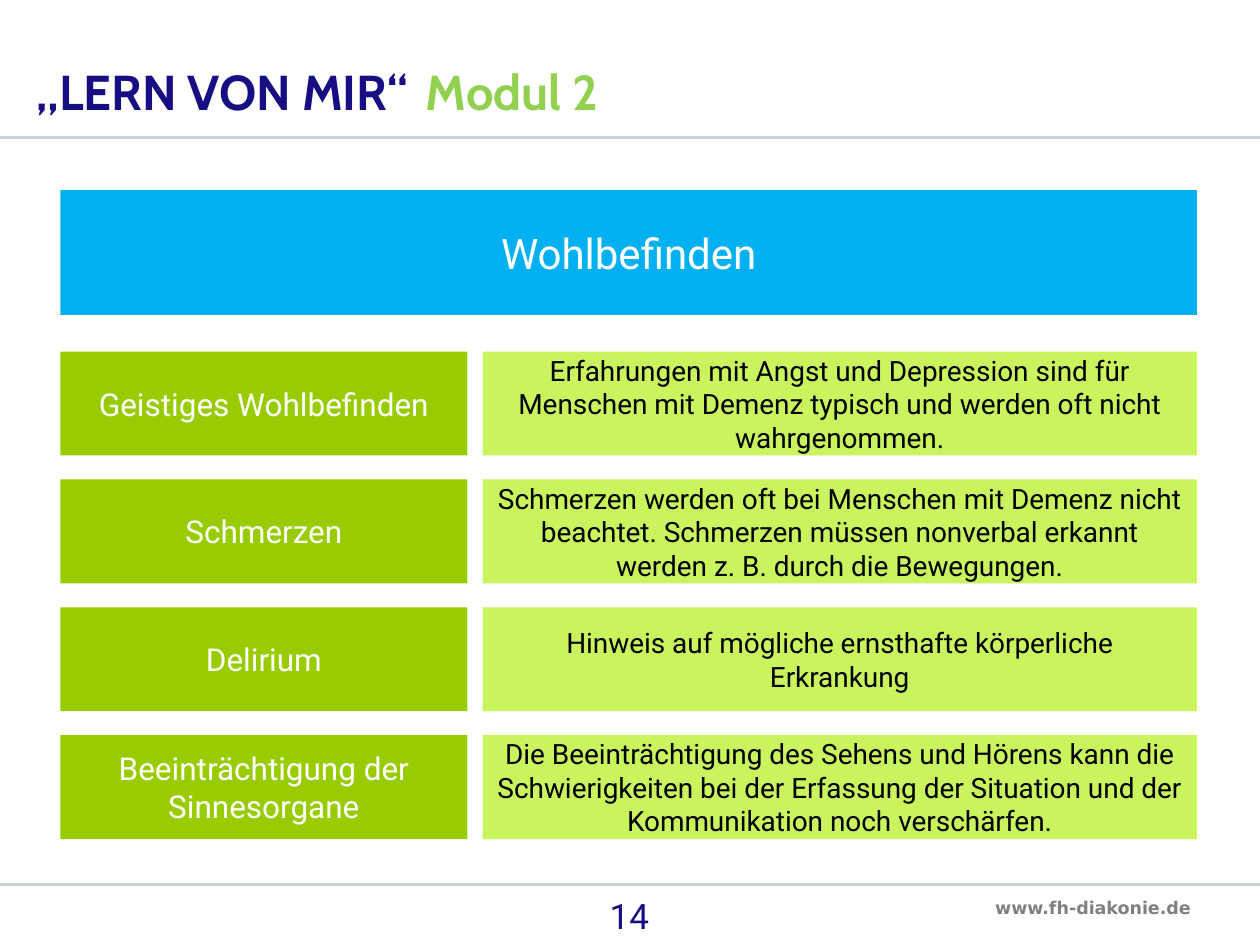
from dataclasses import dataclass

from lxml.etree import SubElement
from pptx import Presentation
from pptx.dml.color import RGBColor
from pptx.enum.shapes import MSO_CONNECTOR, MSO_SHAPE
from pptx.enum.text import MSO_ANCHOR, MSO_AUTO_SIZE, PP_ALIGN
from pptx.oxml.ns import qn
from pptx.util import Inches, Pt


@dataclass(frozen=True)
class Theme:
    navy: str = "170E83"
    lime: str = "92D050"
    blue: str = "00B0F0"
    green: str = "99CC00"
    pale: str = "C9F45E"
    rule: str = "C8D2DC"
    grey: str = "808080"
    white: str = "FFFFFF"
    black: str = "000000"
    title_font: str = "Cabin"
    body_font: str = "Roboto"
    web_font: str = "DejaVu Sans"
    title_size: int = 28
    head_size: int = 24
    page_size: int = 20
    label_size: int = 18
    body_size: int = 16
    web_size: int = 10


THEME = Theme()

ROWS = [
    ("Geistiges Wohlbefinden",
     "Erfahrungen mit Angst und Depression sind für Menschen mit Demenz "
     "typisch und werden oft nicht wahrgenommen."),
    ("Schmerzen",
     "Schmerzen werden oft bei Menschen mit Demenz nicht beachtet. "
     "Schmerzen müssen nonverbal erkannt werden z. B. durch die Bewegungen."),
    ("Delirium",
     "Hinweis auf mögliche ernsthafte körperliche Erkrankung"),
    ("Beeinträchtigung der Sinnesorgane",
     "Die Beeinträchtigung des Sehens und Hörens kann die Schwierigkeiten bei "
     "der Erfassung der Situation und der Kommunikation noch verschärfen."),
]


def format_run(r, font, size, color, bold=False):
    r.font.name = font
    r.font.size = Pt(size)
    r.font.bold = bold
    r.font.color.rgb = RGBColor.from_string(color)


def add_rule(s, y):
    line = s.shapes.add_connector(
        MSO_CONNECTOR.STRAIGHT, Inches(0), Inches(y), Inches(10), Inches(y))
    line.line.color.rgb = RGBColor.from_string(THEME.rule)
    line.line.width = Pt(1.5)
    SubElement(line._element.spPr, qn("a:effectLst"))


def add_text(s, box, text, font, size, color, align, bold=False, wrap=True):
    tf = s.shapes.add_textbox(*map(Inches, box)).text_frame
    tf.word_wrap = wrap
    tf.text = text
    p = tf.paragraphs[0]
    p.alignment = align
    format_run(p.runs[0], font, size, color, bold)


def add_block(s, box, text, fill, size, color):
    sp = s.shapes.add_shape(MSO_SHAPE.RECTANGLE, *map(Inches, box))
    sp.shadow.inherit = False
    sp.fill.solid()
    sp.fill.fore_color.rgb = RGBColor.from_string(fill)
    sp.line.fill.background()
    tf = sp.text_frame
    tf.word_wrap = True
    tf.vertical_anchor = MSO_ANCHOR.MIDDLE
    tf.text = text
    p = tf.paragraphs[0]
    p.alignment = PP_ALIGN.CENTER
    format_run(p.runs[0], THEME.body_font, size, color)


def add_title(s, box, name, module, tab):
    sp = s.shapes.title
    sp.left, sp.top, sp.width, sp.height = map(Inches, box)
    tf = sp.text_frame
    tf.word_wrap = True
    tf.auto_size = MSO_AUTO_SIZE.NONE
    tf.vertical_anchor = MSO_ANCHOR.BOTTOM
    p = tf.paragraphs[0]
    p.alignment = PP_ALIGN.LEFT
    p.line_spacing = 0.9
    tabs = SubElement(p._p.get_or_add_pPr(), qn("a:tabLst"))
    SubElement(tabs, qn("a:tab"), pos=str(Inches(tab)), algn="l")
    for text, color in ((f"{name}\t", THEME.navy), (module, THEME.lime)):
        r = p.add_run()
        r.text = text
        format_run(r, THEME.title_font, THEME.title_size, color, True)


def add_topics(s, box, rows):
    left, top, width, height = box
    label_w, col_gap, row_gap = 3.23, 0.12, 0.19
    row_h = (height - row_gap * (len(rows) - 1)) / len(rows)
    text_x = left + label_w + col_gap
    text_w = width - label_w - col_gap
    for i, (label, text) in enumerate(rows):
        y = top + i * (row_h + row_gap)
        add_block(s, (left, y, label_w, row_h), label,
                  THEME.green, THEME.label_size, THEME.white)
        add_block(s, (text_x, y, text_w, row_h), text,
                  THEME.pale, THEME.body_size, THEME.black)


def add_footer(s, y):
    add_rule(s, y)
    add_text(s, (7.8, y + 0.05, 1.78, 0.27), "www.fh-diakonie.de",
             THEME.web_font, THEME.web_size, THEME.grey,
             PP_ALIGN.LEFT, bold=True, wrap=False)
    add_text(s, (3.83, y + 0.03, 2.33, 0.45), "14",
             THEME.body_font, THEME.page_size, THEME.navy, PP_ALIGN.CENTER)


def main():
    prs = Presentation()
    prs.slide_width, prs.slide_height = Inches(10), Inches(7.5)
    s = prs.slides.add_slide(prs.slide_layouts[5])
    add_title(s, (0.19, 0.43, 6.67, 0.58), "„LERN VON MIR“", "Modul 2", 3.09)
    add_rule(s, 1.09)
    add_block(s, (0.48, 1.51, 9.02, 0.99), "Wohlbefinden",
              THEME.blue, THEME.head_size, THEME.white)
    add_topics(s, (0.48, 2.79, 9.02, 3.87), ROWS)
    add_footer(s, 7.02)
    prs.save("out.pptx")


if __name__ == "__main__":
    main()
